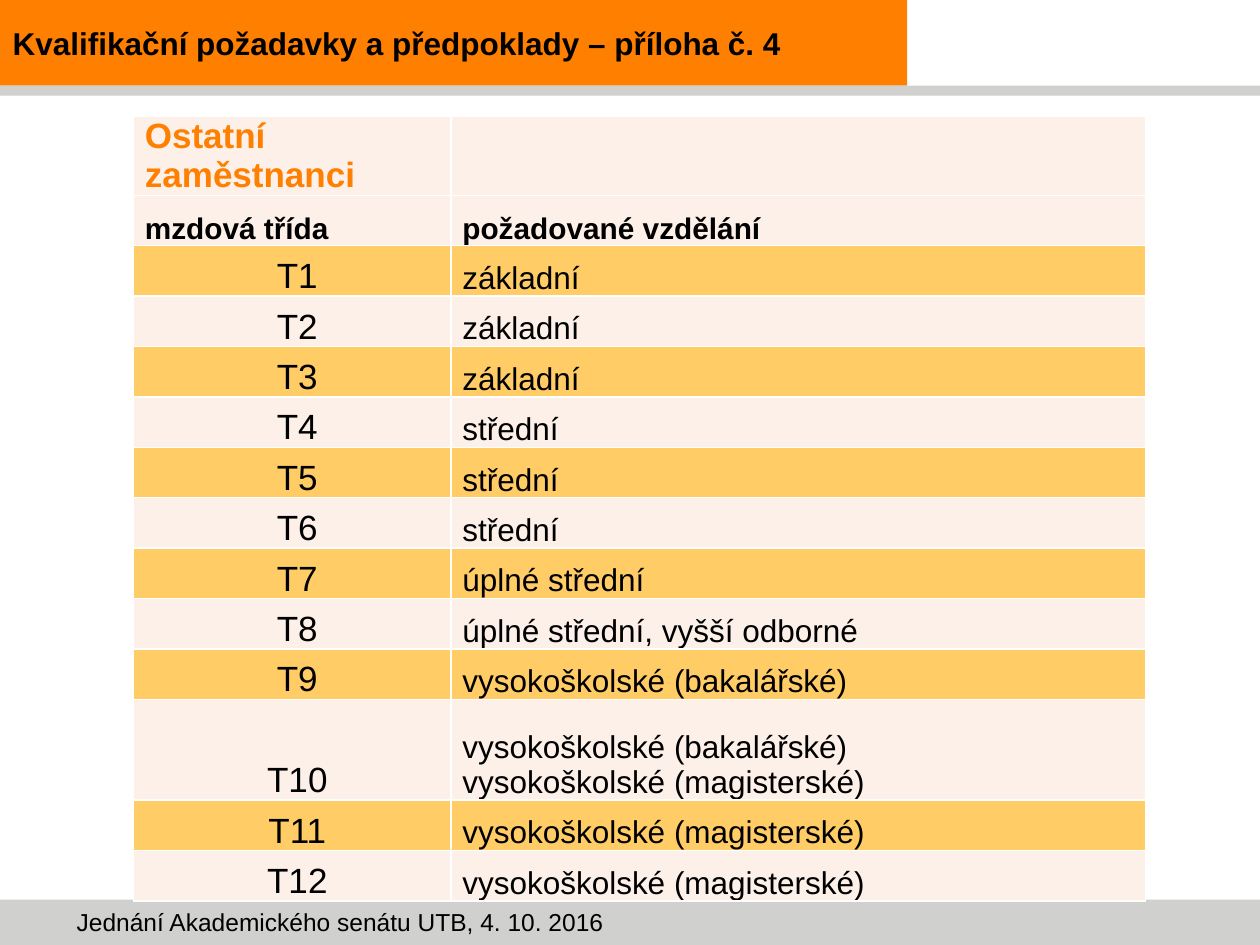
"""Build the slide on qualification requirements for pay classes T1 to T12."""
from lxml.etree import fromstring
from pptx import Presentation
from pptx.dml.color import RGBColor
from pptx.enum.shapes import MSO_SHAPE
from pptx.enum.text import MSO_ANCHOR, MSO_AUTO_SIZE, PP_ALIGN
from pptx.util import Inches, Pt

C = {"orange": "FF8001", "gray": "D0D0CE", "black": "000000",
     "pale": "FCF0E8", "amber": "FFCC66", "white": "FFFFFF"}
NS = "http://schemas.openxmlformats.org/drawingml/2006/main"
BAR_W, BAR_H, ROW_H = 7.2, 0.68, 0.4


def write(p, text, size, color="black", bold=False):
    p.text = text
    for r in p.runs:
        for key, val in {"name": "Arial", "size": Pt(size), "bold": bold}.items():
            setattr(r.font, key, val)
        r.font.color.rgb = RGBColor.from_string(C[color])


def box(*dims):
    return [Inches(d) for d in dims]


prs = Presentation()
prs.slide_width, prs.slide_height = box(10, 7.5)
s = prs.slides.add_slide(prs.slide_layouts[5])

for color, *dims in [("orange", 0, 0, BAR_W, BAR_H),
                     ("gray", 0, 7.14, 10, 0.36),
                     ("gray", 0, BAR_H, 10, 0.08)]:
    sp = s.shapes.add_shape(MSO_SHAPE.RECTANGLE, *box(*dims))
    sp.shadow.inherit = False
    sp.fill.solid()
    sp.fill.fore_color.rgb = RGBColor.from_string(C[color])
    sp.line.fill.background()

tb = s.shapes.add_textbox(*box(0.51, 7.15, 9.21, 0.34))
tb.text_frame.word_wrap = True
write(tb.text_frame.paragraphs[0], "Jednání Akademického senátu UTB, 4. 10. 2016", 14)

title = s.shapes.title
s.shapes.element.append(title.element)
for key, val in zip(("left", "top", "width", "height"), box(0, 0, BAR_W, BAR_H)):
    setattr(title, key, val)
tf = title.text_frame
for key, val in {"auto_size": MSO_AUTO_SIZE.NONE, "word_wrap": True,
                 "vertical_anchor": MSO_ANCHOR.MIDDLE}.items():
    setattr(tf, key, val)
p = tf.paragraphs[0]
write(p, "Kvalifikační požadavky a předpoklady – příloha č. 4", 18, bold=True)
p.alignment = PP_ALIGN.LEFT
for key, val in {"marL": 0.2, "indent": -0.2}.items():
    p._p.get_or_add_pPr().set(key, str(Inches(val)))

bc, mg = "vysokoškolské (bakalářské)", "vysokoškolské (magisterské)"
levels = ["základní"] * 3 + ["střední"] * 3 + [
    "úplné střední", "úplné střední, vyšší odborné", bc, f"{bc}\v{mg}", mg, mg]
rows = [("Ostatní zaměstnanci", ""), ("mzdová třída", "požadované vzdělání")]
rows += [(f"T{n}", level) for n, level in enumerate(levels, 1)]

tbl = s.shapes.add_table(len(rows), 2, *box(1.06, 0.92, 8.03, ROW_H * 15)).table
for col, width in zip(tbl.columns, box(2.52, 5.51)):
    col.width = width
for i, texts in enumerate(rows):
    tbl.rows[i].height = Inches(ROW_H * (1 + texts[1].count("\v")))
    fill = "amber" if i > 1 and i % 2 == 0 else "pale"
    for j, text in enumerate(texts):
        cell = tbl.cell(i, j)
        for key, val in {"margin_left": Inches(0.09), "margin_right": Inches(0.01),
                         "margin_top": Inches(0.01), "margin_bottom": 0,
                         "vertical_anchor": MSO_ANCHOR.BOTTOM}.items():
            setattr(cell, key, val)
        cell.fill.solid()
        cell.fill.fore_color.rgb = RGBColor.from_string(C[fill])
        for k, side in enumerate("LRTB"):
            cell._tc.get_or_add_tcPr().insert(k, fromstring(
                f'<a:ln{side} xmlns:a="{NS}" w="{Pt(1)}"><a:solidFill>'
                f'<a:srgbClr val="{C["white"]}"/></a:solidFill></a:ln{side}>'))
        p = cell.text_frame.paragraphs[0]
        if i == 0:
            write(p, text, 20, "orange", True)
        elif i == 1:
            write(p, text, 17, bold=True)
        else:
            write(p, text, 18 if j else 20)
            p.alignment = PP_ALIGN.LEFT if j else PP_ALIGN.CENTER

prs.save("out.pptx")
